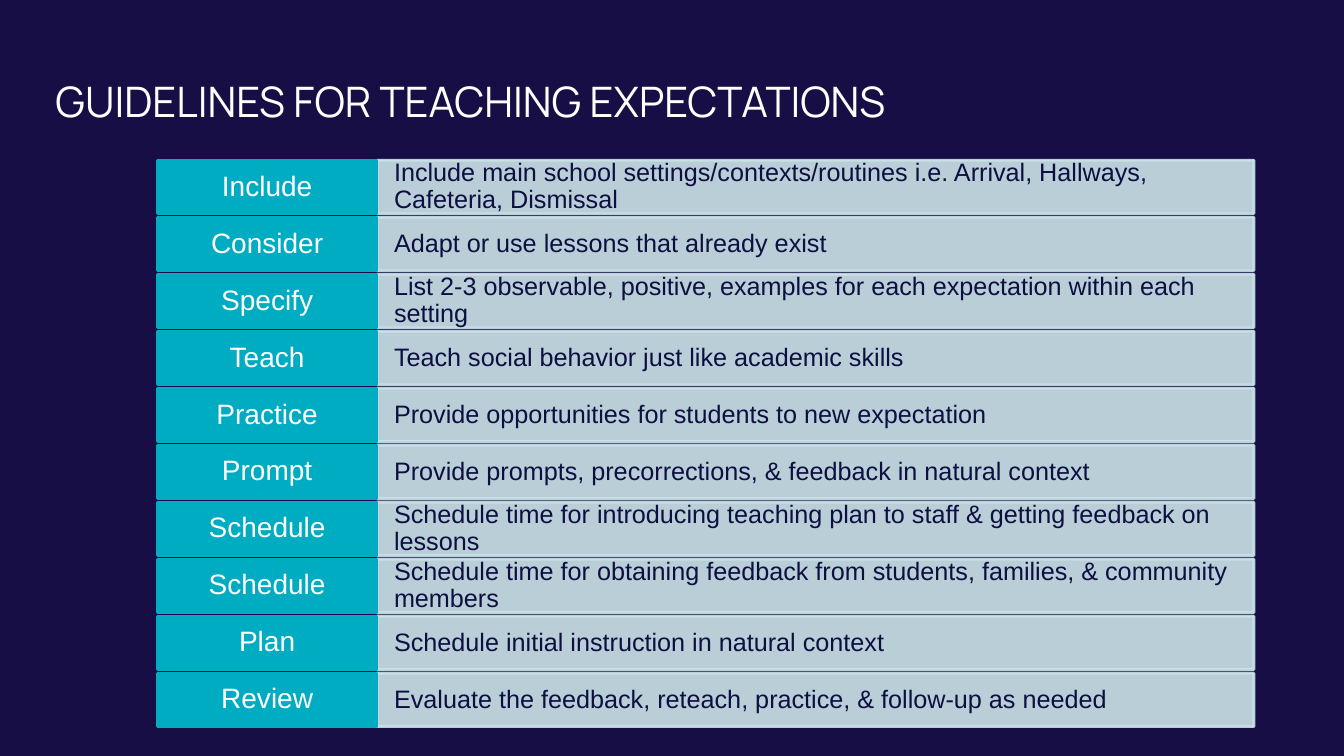
from dataclasses import dataclass

from lxml.etree import SubElement
from pptx import Presentation
from pptx.dml.color import RGBColor
from pptx.enum.shapes import MSO_SHAPE
from pptx.enum.text import MSO_ANCHOR, PP_ALIGN
from pptx.oxml.ns import qn
from pptx.util import Pt


@dataclass(frozen=True)
class Theme:
    back: RGBColor = RGBColor(0x16, 0x0E, 0x44)
    white: RGBColor = RGBColor(0xFF, 0xFF, 0xFF)
    teal: RGBColor = RGBColor(0x00, 0xAC, 0xC2)
    pale: RGBColor = RGBColor(0xCC, 0xE3, 0xE9)
    ink: RGBColor = RGBColor(0x0D, 0x0F, 0x41)
    head: str = "Manrope"
    body: str = "Arial"
    title: int = 30
    label: int = 20
    text: int = 18


THEME = Theme()
LEFT, TOP = 112.3, 114.5
LABEL, DETAIL = 157, 626.4
HEIGHT, PITCH = 38.2, 40.7

ROWS = [
    ("Include", "Include main school settings/contexts/routines i.e. Arrival, Hallways, Cafeteria, Dismissal"),
    ("Consider", "Adapt or use lessons that already exist"),
    ("Specify", "List 2-3 observable, positive, examples for each expectation within each setting"),
    ("Teach", "Teach social behavior just like academic skills"),
    ("Practice", "Provide opportunities for students to new expectation"),
    ("Prompt", "Provide prompts, precorrections, & feedback in natural context"),
    ("Schedule", "Schedule time for introducing teaching plan to staff & getting feedback on lessons"),
    ("Schedule", "Schedule time for obtaining feedback from students, families, & community members"),
    ("Plan", "Schedule initial instruction in natural context"),
    ("Review", "Evaluate the feedback, reteach, practice, & follow-up as needed"),
]


def place(shape, left, top, width, height):
    shape.left, shape.top = Pt(left), Pt(top)
    shape.width, shape.height = Pt(width), Pt(height)


def write(shape, text, face, size, color, align, anchor, side, edge):
    frame = shape.text_frame
    frame.word_wrap = True
    frame.vertical_anchor = anchor
    frame.margin_left = frame.margin_right = Pt(side)
    frame.margin_top = frame.margin_bottom = Pt(edge)
    line = frame.paragraphs[0]
    line.text = text
    line.alignment = align
    line.font.name = face
    line.font.size = Pt(size)
    line.font.color.rgb = color
    return line


def add_title(slide, text):
    title = slide.shapes.title
    place(title, 32.4, 46.8, 894.2, 60.5)
    write(title, text, THEME.head, THEME.title, THEME.white,
          PP_ALIGN.LEFT, MSO_ANCHOR.TOP, 7.2, 7.2)


def add_box(slide, left, top, width, color):
    box = slide.shapes.add_shape(
        MSO_SHAPE.RECTANGLE, Pt(left), Pt(top), Pt(width), Pt(HEIGHT))
    box.shadow.inherit = False
    box.fill.solid()
    box.fill.fore_color.rgb = color
    box.line.color.rgb = color
    box.line.width = Pt(2)
    return box


def fade(box, share):
    for color in box.element.spPr.iter(qn("a:srgbClr")):
        SubElement(color, qn("a:alpha")).set("val", str(share * 1000))


def add_row(slide, top, label, detail):
    pale = add_box(slide, LEFT + LABEL, top, DETAIL, THEME.pale)
    fade(pale, 90)
    line = write(pale, detail, THEME.body, THEME.text, THEME.ink,
                 PP_ALIGN.LEFT, MSO_ANCHOR.MIDDLE, 12.2, 10)
    line.line_spacing = 0.9
    teal = add_box(slide, LEFT, top, LABEL, THEME.teal)
    line = write(teal, label, THEME.body, THEME.label, THEME.white,
                 PP_ALIGN.CENTER, MSO_ANCHOR.MIDDLE, 8.6, 3.6)
    line.line_spacing = 0.9


def main():
    deck = Presentation()
    deck.slide_width, deck.slide_height = Pt(960), Pt(540)
    slide = deck.slides.add_slide(deck.slide_layouts[5])
    slide.background.fill.solid()
    slide.background.fill.fore_color.rgb = THEME.back
    add_title(slide, "GUIDELINES FOR TEACHING EXPECTATIONS")
    for index, (label, detail) in enumerate(ROWS):
        add_row(slide, TOP + index * PITCH, label, detail)
    deck.save("out.pptx")


if __name__ == "__main__":
    main()
